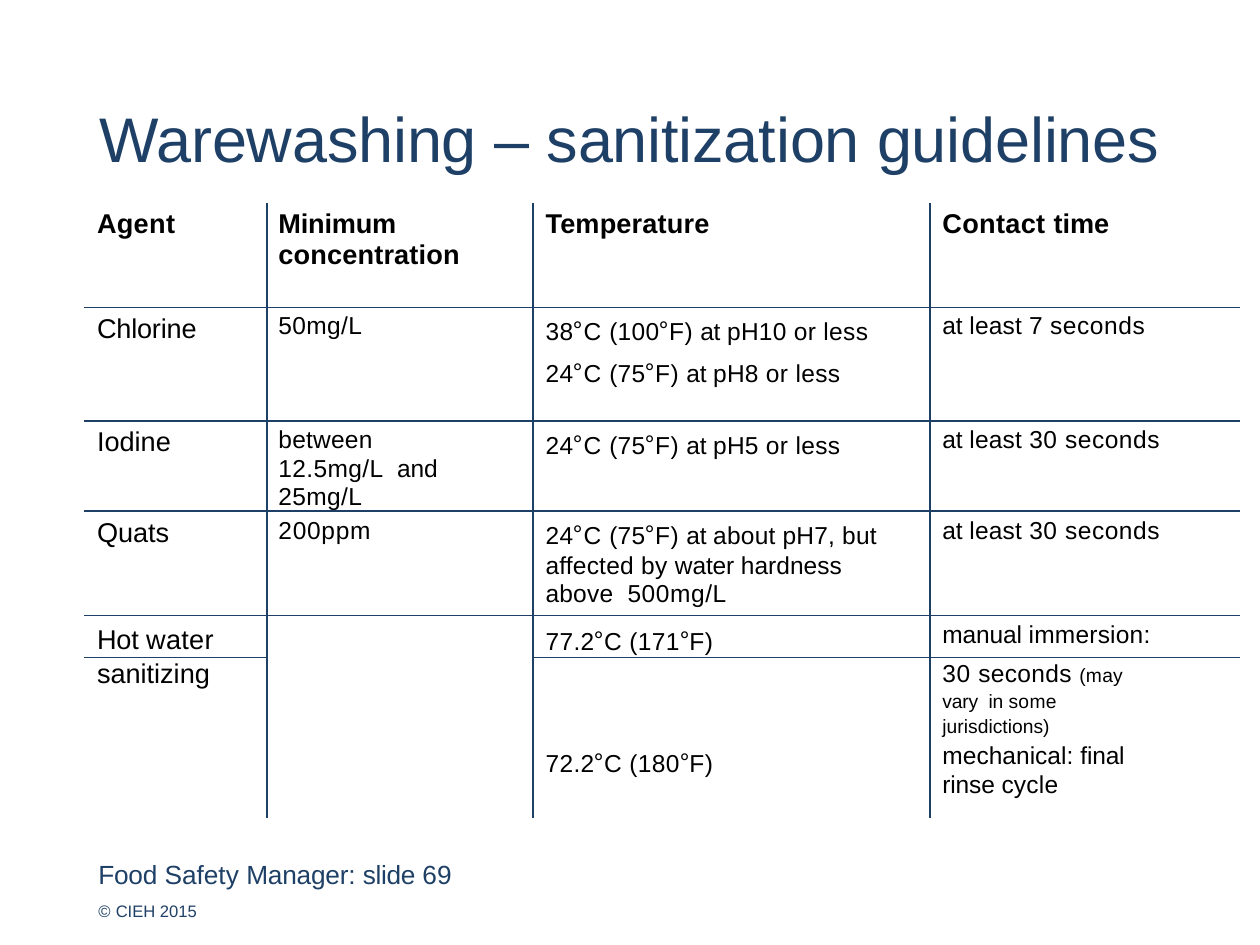
from dataclasses import dataclass

from lxml import etree
from pptx import Presentation
from pptx.dml.color import RGBColor
from pptx.enum.text import MSO_ANCHOR, MSO_AUTO_SIZE, PP_ALIGN
from pptx.oxml.ns import qn
from pptx.util import Inches, Pt

BOTTOM = MSO_ANCHOR.BOTTOM
TOP = MSO_ANCHOR.TOP
LEFT = PP_ALIGN.LEFT
NO_FIT = MSO_AUTO_SIZE.NONE


@dataclass(frozen=True)
class Theme:
    navy: RGBColor = RGBColor(0x1F, 0x40, 0x66)
    black: RGBColor = RGBColor(0, 0, 0)
    white: RGBColor = RGBColor(255, 255, 255)
    font: str = "Arial"
    degree_font: str = "Noto Sans CJK JP"
    title: float = 36
    heading: float = 15.5
    body: float = 14
    small: float = 11
    footer: float = 15
    copyright: float = 9.5
    rule: float = 1


THEME = Theme()


@dataclass
class Line:
    runs: list
    spacing: object = None
    before: float = 0


@dataclass
class Entry:
    lines: list
    top: float = 0.04
    right: float = 0


def temperature(celsius, fahrenheit, *ending):
    return [(celsius, 0.3), ("°", 0.3), ("C ", 0.3), ("(" + fahrenheit, 0.2),
            ("°", 0.2), ("F) ", 0.2), ("at ", -0.1), *ending]


def hot_water(celsius, fahrenheit):
    return [(celsius, 0.2), ("°", 0.2), (f"C ({fahrenheit}", 0.2), ("°", 0.2), ("F)", 0.2)]


def acidity(level):
    return ("pH" + level + " ", 0.1), ("or less", 0.2)


def entry(*runs, top=0.04):
    return Entry([Line(list(runs))], top)


HALF_MINUTE = [("at ", -0.1), ("least ", 0.1), ("30 seconds", 0.3)]
EMPTY = Entry([])
GUIDELINES = [
    [entry(("Agent", 0.2), top=0.05),
     Entry([Line([("Minimum", -0.1)]), Line([("concentration", 0.1)], before=0.2)], 0.05),
     entry(("Temperature", 0.1), top=0.05),
     entry(("Contact ", 0.2), ("time", 0), top=0.05)],
    [entry(("Chlorine", -0.1), top=0.05),
     entry(("50mg/L", 0.2)),
     Entry([Line(temperature("38", "100", *acidity("10"))),
            Line(temperature("24", "75", *acidity("8")), before=3.5)]),
     entry(("at ", -0.1), ("least 7 ", 0.1), ("seconds", 0.3))],
    [entry(("Iodine", 0), top=0.05),
     Entry([Line([("between ", 0.1), ("12.5mg/L  ", 0.2), ("and ", -0.1), ("25mg/L", 0.2)],
                 1.03)], right=0.5),
     entry(*temperature("24", "75", *acidity("5"))),
     entry(*HALF_MINUTE)],
    [entry(("Quats", 0), top=0.06),
     entry(("200ppm", 0.4), top=0.05),
     Entry([Line(temperature("24", "75", ("about pH7, but  affected ", 0.1), ("by ", 0.2),
                             ("water ", -0.1), ("hardness ", 0), ("above  ", 0.1),
                             ("500mg/L", 0.3)), 1.01)], right=0.3),
     entry(*HALF_MINUTE, top=0.05)],
    [Entry([Line([("Hot ", -0.1), ("water", 0.2)], Pt(18.4))], 0.06),
     EMPTY,
     entry(*hot_water("77.2", "171"), top=0.05),
     entry(("manual ", -0.1), ("immersion:", 0.1), top=0.05)],
    [Entry([Line([("sanitizing", 0)], Pt(17.9))], 0),
     EMPTY,
     EMPTY,
     Entry([Line([("30 ", 0.3), ("seconds ", 0.2), ("(may ", 0.1, THEME.small),
                  ("vary  in ", -0.1, THEME.small), ("some ", 0.2, THEME.small),
                  ("jurisdictions)", 0, THEME.small)], Pt(14.3))], right=0.72)],
    [EMPTY,
     EMPTY,
     entry(*hot_water("72.2", "180"), top=0.05),
     Entry([Line([("mechanical: ", 0), ("final  rinse ", -0.1), ("cycle", 0.1)],
                 Pt(16.5))], 0.03, 0.72)],
]
COLUMN_WIDTHS = [1.45, 2.11, 3.15, 2.46]
ROW_HEIGHTS = [0.83, 0.9, 0.67, 0.83, 0.33, 0.46, 0.64]
HOT_WATER_ROW = 4
CONCENTRATION_COLUMN = 1


def write_lines(text_frame, lines, size, color, indent, bold=False):
    for index, line in enumerate(lines):
        paragraph = text_frame.paragraphs[0] if index == 0 else text_frame.add_paragraph()
        paragraph.alignment = LEFT
        properties = paragraph._p.get_or_add_pPr()
        properties.set("marL", str(Inches(indent)))
        properties.set("indent", "0")
        paragraph.space_before = Pt(line.before)
        if line.spacing:
            paragraph.line_spacing = line.spacing
        for text, tracking, *own_size in line.runs:
            run = paragraph.add_run()
            run.text = text
            run.font.name = THEME.degree_font if text == "°" else THEME.font
            run.font.size = Pt(own_size[0] if own_size else size)
            run.font.bold = bold
            run.font.color.rgb = color
            run._r.get_or_add_rPr().set("spc", str(round(tracking * 100)))


def prepare_frame(shape, box, anchor):
    shape.left, shape.top, shape.width, shape.height = map(Inches, box)
    frame = shape.text_frame
    frame.margin_left = frame.margin_top = frame.margin_right = frame.margin_bottom = 0
    frame.word_wrap = True
    frame.auto_size = NO_FIT
    frame.vertical_anchor = anchor
    return frame


def add_title(slide, box):
    frame = prepare_frame(slide.shapes.title, box, BOTTOM)
    runs = [("Warewashing ", -0.1), ("– ", 0), ("sanitization guidelines", -0.1)]
    write_lines(frame, [Line(runs)], THEME.title, THEME.navy, 0.05)


def add_footer(slide, box):
    frame = prepare_frame(slide.shapes.add_textbox(*map(Inches, box)), box, TOP)
    course = [("Food ", -0.1), ("Safety ", 0), ("Manager: ", -0.1), ("slide ", -0.2), ("69", 0)]
    notice = [("© ", 0.2, THEME.copyright), ("CIEH 2015", 0, THEME.copyright)]
    lines = [Line(course, Pt(17.6)), Line(notice, before=6.4)]
    write_lines(frame, lines, THEME.footer, THEME.navy, 0.01)


def has_rule_below(row, column):
    if row == HOT_WATER_ROW:
        return column != CONCENTRATION_COLUMN
    return 0 <= row < HOT_WATER_ROW


def set_borders(cell, row, column):
    sides = {"a:lnL": column > 0, "a:lnR": column < len(COLUMN_WIDTHS) - 1,
             "a:lnT": has_rule_below(row - 1, column), "a:lnB": has_rule_below(row, column)}
    properties = cell._tc.get_or_add_tcPr()
    for tag, visible in sides.items():
        border = etree.SubElement(properties, qn(tag), w=str(Pt(THEME.rule)))
        if visible:
            fill = etree.SubElement(border, qn("a:solidFill"))
            etree.SubElement(fill, qn("a:srgbClr"), val=str(THEME.navy))
        else:
            etree.SubElement(border, qn("a:noFill"))


def add_guidelines_table(slide, box):
    shape = slide.shapes.add_table(len(ROW_HEIGHTS), len(COLUMN_WIDTHS), *map(Inches, box))
    table = shape.table
    table.first_row = table.horz_banding = False
    for column, width in zip(table.columns, COLUMN_WIDTHS):
        column.width = Inches(width)
    for row, height in zip(table.rows, ROW_HEIGHTS):
        row.height = Inches(height)
    table.cell(HOT_WATER_ROW, CONCENTRATION_COLUMN).merge(
        table.cell(len(ROW_HEIGHTS) - 1, CONCENTRATION_COLUMN))
    for row, entries in enumerate(GUIDELINES):
        for column, content in enumerate(entries):
            cell = table.cell(row, column)
            cell.margin_left = cell.margin_bottom = 0
            cell.margin_top = Inches(content.top)
            cell.margin_right = Inches(content.right)
            set_borders(cell, row, column)
            cell.fill.background()
            size = THEME.heading if row == 0 or column == 0 else THEME.body
            indent = 0.09 if column == CONCENTRATION_COLUMN else 0.1
            write_lines(cell.text_frame, content.lines, size, THEME.black, indent, row == 0)


def main():
    presentation = Presentation()
    presentation.slide_width, presentation.slide_height = Inches(10), Inches(7.5)
    slide = presentation.slides.add_slide(presentation.slide_layouts[5])
    slide.background.fill.solid()
    slide.background.fill.fore_color.rgb = THEME.white
    add_title(slide, (0.74, 0.76, 8.52, 0.63))
    add_footer(slide, (0.77, 6.82, 3.01, 0.51))
    add_guidelines_table(slide, (0.67, 1.61, sum(COLUMN_WIDTHS), sum(ROW_HEIGHTS)))
    presentation.save("out.pptx")


if __name__ == "__main__":
    main()
